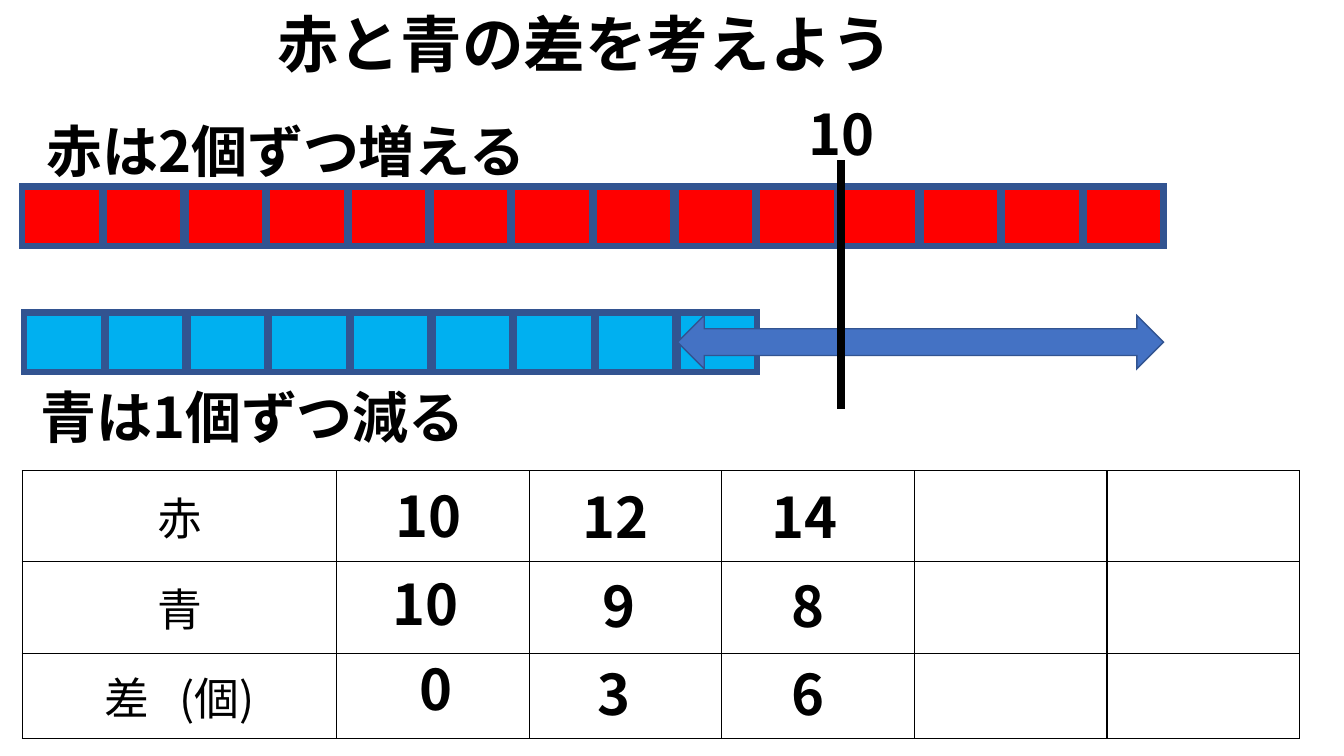
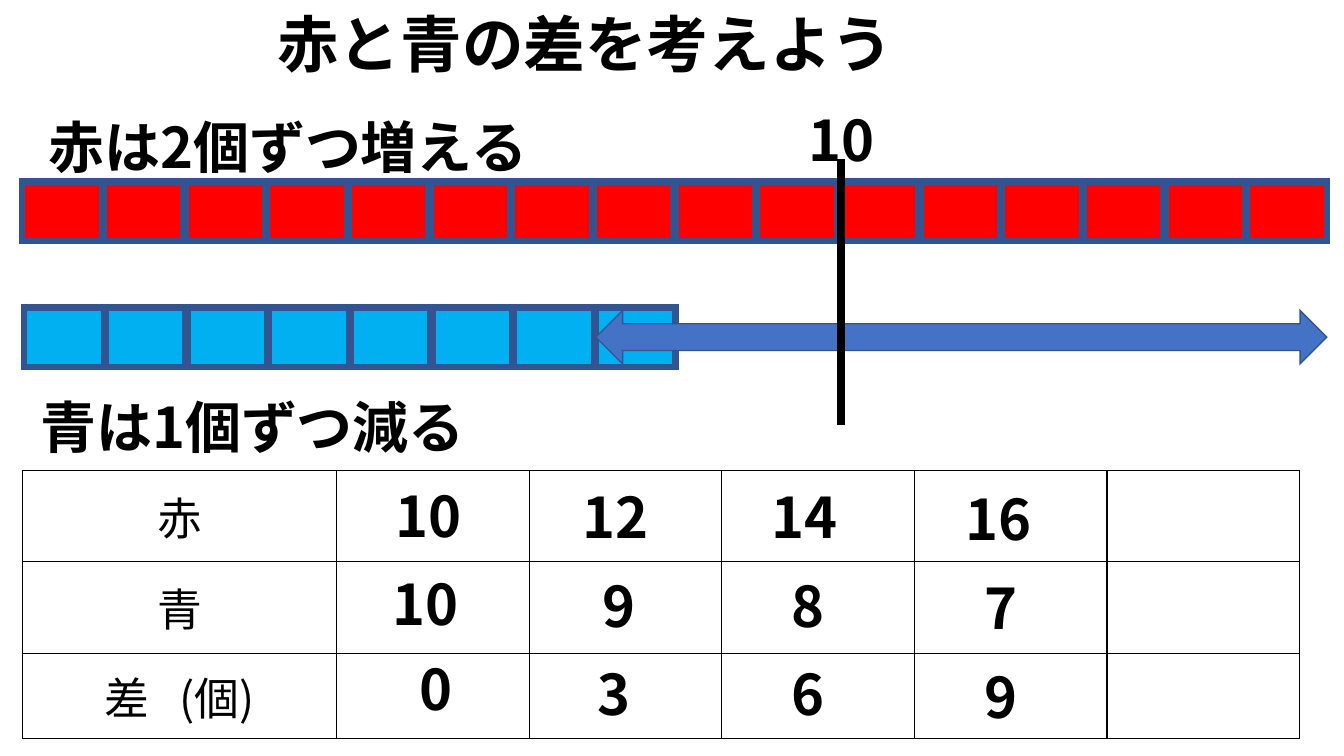
"""Builds two slides that compare a growing red bar with a shrinking blue bar."""
from lxml import etree
from pptx import Presentation
from pptx import util as u
from pptx.dml.color import RGBColor
from pptx.enum import shapes, text
from pptx.oxml.ns import qn

COLORS = {
    "ink": "000000",
    "red": "FF0000",
    "blue": "00B0F0",
    "outline": "325491",
    "arrow": "4472C4",
}
FONT = "Noto Sans CJK JP"
TITLE = "赤と青の差を考えよう"
PITCH, BLOCK_W, BLOCK_H = 0.81, 0.79, 0.59
RED_LEFT, BLUE_LEFT, MARK_X = 0.22, 0.24, 8.34
ROW_NAMES = ["赤", "青", "差   (個)"]
COLUMN_WIDTHS = [3.12] + [1.91] * 5
ROW_HEIGHTS = [0.9, 0.91, 0.85]
ANSWER_PLACES = [
    [(3.82, 4.73, 1.14), (3.79, 5.6, 1.14), (4.06, 6.44, 0.87)],
    [(5.68, 4.74, 0.87), (5.88, 5.62, 0.59), (5.83, 6.49, 0.87)],
    [(7.55, 4.74, 0.87), (7.75, 5.62, 0.59), (7.75, 6.49, 0.87)],
    [(9.48, 4.76, 0.87), (9.67, 5.64, 0.59), (9.67, 6.52, 0.87)],
]


def inches(*values):
    return [u.Inches(v) for v in values]


def color(name):
    return RGBColor.from_string(COLORS[name])


def write(tf, content, size=40, bold=True, align=text.PP_ALIGN.LEFT):
    p = tf.paragraphs[0]
    p.alignment = align
    r = p.add_run()
    r.text = content
    r.font.name = FONT
    r.font.size = u.Pt(size)
    r.font.bold = bold
    r.font.color.rgb = color("ink")
    ea = etree.SubElement(r.font._element, qn("a:ea"))
    ea.set("typeface", FONT)


def add_title(s):
    sp = s.shapes.title
    sp.left, sp.top, sp.width, sp.height = inches(2.65, 0.01, 8.67, 0.84)
    tf = sp.text_frame
    tf.auto_size = text.MSO_AUTO_SIZE.NONE
    tf.vertical_anchor = text.MSO_ANCHOR.TOP
    write(tf, TITLE, size=44)


def add_label(s, content, left, top, width=5.96):
    tf = s.shapes.add_textbox(*inches(left, top, width, 0.77)).text_frame
    tf.word_wrap = True
    write(tf, content)


def add_filled(s, kind, box, fill, line_width):
    sp = s.shapes.add_shape(kind, *inches(*box))
    sp.shadow.inherit = False
    sp.fill.solid()
    sp.fill.fore_color.rgb = color(fill)
    sp.line.color.rgb = color("outline")
    sp.line.width = u.Pt(line_width)
    ln = sp._element.spPr.find(qn("a:ln"))
    etree.SubElement(ln, qn("a:miter"), lim="800000")


def add_bar(s, left, top, count, fill):
    for i in range(count):
        box = (left + i * PITCH, top, BLOCK_W, BLOCK_H)
        add_filled(s, shapes.MSO_SHAPE.RECTANGLE, box, fill, 4.5)


def add_gap_arrow(s, red, blue, top):
    left = BLUE_LEFT + (blue - 1) * PITCH
    right = RED_LEFT + (red - 1) * PITCH + BLOCK_W
    box = (left, top, right - left, 0.53)
    add_filled(s, shapes.MSO_SHAPE.LEFT_RIGHT_ARROW, box, "arrow", 1)


def add_marker(s, top, bottom):
    line = s.shapes.add_connector(
        shapes.MSO_CONNECTOR.STRAIGHT, *inches(MARK_X, top, MARK_X, bottom))
    line.line.color.rgb = color("ink")
    line.line.width = u.Pt(6)
    etree.SubElement(line._element.spPr, qn("a:effectLst"))


def add_borders(cell):
    tc_pr = cell._tc.get_or_add_tcPr()
    for i, side in enumerate(("lnL", "lnR", "lnT", "lnB")):
        ln = etree.Element(qn(f"a:{side}"), w=str(u.Pt(1)))
        fill = etree.SubElement(ln, qn("a:solidFill"))
        etree.SubElement(fill, qn("a:srgbClr"), val=COLORS["ink"])
        tc_pr.insert(i, ln)


def add_table(s):
    frame = s.shapes.add_table(
        len(ROW_HEIGHTS), len(COLUMN_WIDTHS),
        *inches(0.22, 4.67, sum(COLUMN_WIDTHS), sum(ROW_HEIGHTS)))
    table = frame.table
    table.first_row = table.horz_banding = False
    for column, width in zip(table.columns, COLUMN_WIDTHS):
        column.width = u.Inches(width)
    for row, height, name in zip(table.rows, ROW_HEIGHTS, ROW_NAMES):
        row.height = u.Inches(height)
        for cell in row.cells:
            cell.fill.background()
            cell.vertical_anchor = text.MSO_ANCHOR.MIDDLE
            add_borders(cell)
        write(row.cells[0].text_frame, name, size=32, bold=False,
              align=text.PP_ALIGN.CENTER)


def add_answers(s, steps):
    for i, places in enumerate(ANSWER_PLACES[:steps]):
        for value, place in zip((10 + 2 * i, 10 - i, 3 * i), places):
            add_label(s, str(value), *place)


def add_step_slide(prs, steps, bar_top, red_label, blue_label, mark_label, mark):
    s = prs.slides.add_slide(prs.slide_layouts[5])
    red, blue = 8 + 2 * steps, 12 - steps
    add_title(s)
    add_bar(s, RED_LEFT, bar_top, red, "red")
    add_bar(s, BLUE_LEFT, bar_top + 1.25, blue, "blue")
    add_table(s)
    add_answers(s, steps)
    add_gap_arrow(s, red, blue, bar_top + 1.28)
    add_label(s, "10", 7.92, mark_label, width=1.14)
    add_marker(s, *mark)
    add_label(s, "赤は2個ずつ増える", *red_label)
    add_label(s, "青は1個ずつ減る", *blue_label)


def main():
    prs = Presentation()
    prs.slide_width, prs.slide_height = inches(13.33, 7.5)
    add_step_slide(prs, steps=3, bar_top=1.85, red_label=(0.36, 1.11),
                   blue_label=(0.3, 3.75), mark_label=0.94, mark=(1.59, 4.06))
    add_step_slide(prs, steps=4, bar_top=1.8, red_label=(0.38, 1.07),
                   blue_label=(0.3, 3.85), mark_label=1, mark=(1.58, 4.22))
    prs.save("out.pptx")


if __name__ == "__main__":
    main()
